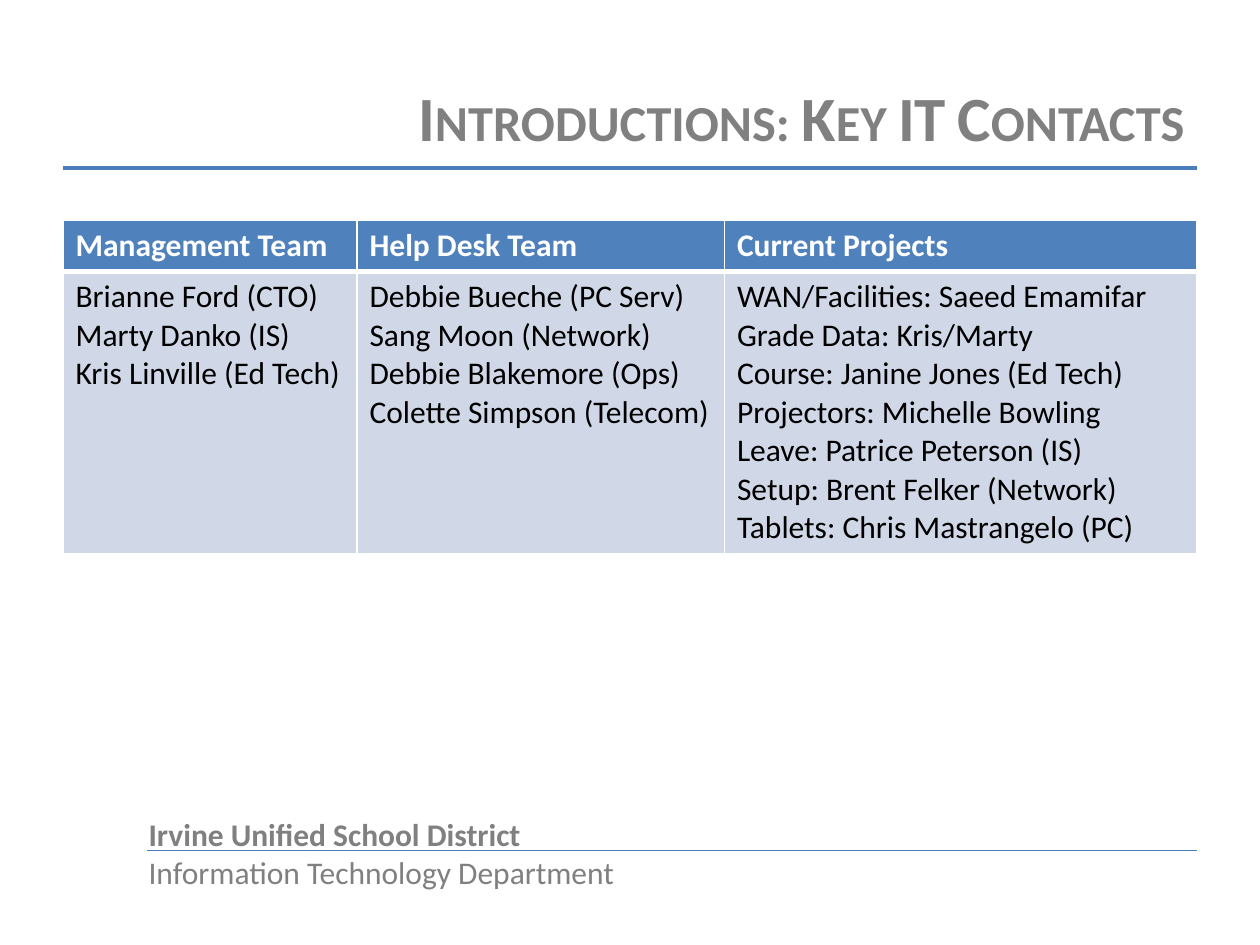
from lxml.etree import SubElement
from pptx import Presentation
from pptx.dml.color import RGBColor
from pptx.enum.shapes import MSO_CONNECTOR
from pptx.enum.text import MSO_ANCHOR, PP_ALIGN
from pptx.oxml.ns import qn
from pptx.util import Pt

COLORS = {
    "gray": "808080",
    "rule": "4B7EBC",
    "header": "4F81BD",
    "body": "D0D8E8",
    "white": "FFFFFF",
    "black": "000000",
}
CONTACTS = {
    "Management Team": [
        "Brianne Ford (CTO)",
        "Marty Danko (IS)",
        "Kris Linville (Ed Tech)",
    ],
    "Help Desk Team": [
        "Debbie Bueche (PC Serv)",
        "Sang Moon (Network)",
        "Debbie Blakemore (Ops)",
        "Colette Simpson (Telecom)",
    ],
    "Current Projects": [
        "WAN/Facilities: Saeed Emamifar",
        "Grade Data: Kris/Marty",
        "Course: Janine Jones (Ed Tech)",
        "Projectors: Michelle Bowling",
        "Leave: Patrice Peterson (IS)",
        "Setup: Brent Felker (Network)",
        "Tablets: Chris Mastrangelo (PC)",
    ],
}
COLUMN_WIDTHS = [168, 210, 270]
ROW_HEIGHTS = [29.2, 161]


def color(name):
    return RGBColor.from_string(COLORS[name])


def write_lines(text_frame, lines, size, color_name, bold=False):
    text_frame.text = "\n".join(lines)
    for paragraph in text_frame.paragraphs:
        paragraph.font.name = "Calibri"
        paragraph.font.size = Pt(size)
        paragraph.font.bold = bold
        paragraph.font.color.rgb = color(color_name)


def add_text_box(slide, left, top, width, height):
    text_frame = slide.shapes.add_textbox(
        Pt(left), Pt(top), Pt(width), Pt(height)).text_frame
    text_frame.word_wrap = True
    return text_frame


def add_rule(slide, left, right, y, width):
    rule = slide.shapes.add_connector(
        MSO_CONNECTOR.STRAIGHT, Pt(left), Pt(y), Pt(right), Pt(y))
    rule.line.color.rgb = color("rule")
    rule.line.width = Pt(width)
    SubElement(rule._element.spPr, qn("a:effectLst"))


def add_title(slide, text):
    """Right-aligned title in small capitals."""
    text_frame = add_text_box(slide, 36, 21.6, 648, 90)
    text_frame.vertical_anchor = MSO_ANCHOR.MIDDLE
    write_lines(text_frame, [text], 36, "gray", bold=True)
    paragraph = text_frame.paragraphs[0]
    paragraph.alignment = PP_ALIGN.RIGHT
    paragraph.runs[0]._r.get_or_add_rPr().set("cap", "small")


def add_footer(slide):
    text_frame = add_text_box(slide, 77.8, 462.2, 600, 72.7)
    write_lines(
        text_frame,
        ["Irvine Unified School District", "Information Technology Department"],
        18, "gray")
    text_frame.paragraphs[0].font.bold = True


def set_border(cell, side, width):
    """White border on one side; side is an element name such as a:lnB."""
    properties = cell._tc.get_or_add_tcPr()
    border = SubElement(properties, qn(side), w=str(Pt(width)))
    fill = SubElement(border, qn("a:solidFill"))
    SubElement(fill, qn("a:srgbClr"), val=COLORS["white"])


def fill_cell(cell, lines, fill_name, color_name, bold):
    cell.fill.solid()
    cell.fill.fore_color.rgb = color(fill_name)
    write_lines(cell.text_frame, lines, 18, color_name, bold)


def add_contact_table(slide):
    table = slide.shapes.add_table(
        len(ROW_HEIGHTS), len(CONTACTS), Pt(36), Pt(126),
        Pt(sum(COLUMN_WIDTHS)), Pt(sum(ROW_HEIGHTS))).table
    for row, height in zip(table.rows, ROW_HEIGHTS):
        row.height = Pt(height)
    for index, (heading, people) in enumerate(CONTACTS.items()):
        table.columns[index].width = Pt(COLUMN_WIDTHS[index])
        header_cell, body_cell = table.cell(0, index), table.cell(1, index)
        set_border(header_cell, "a:lnB", 3)
        set_border(body_cell, "a:lnT", 3)
        fill_cell(header_cell, [heading], "header", "white", True)
        fill_cell(body_cell, people, "body", "black", False)


def main():
    presentation = Presentation()
    presentation.slide_width = Pt(720)
    presentation.slide_height = Pt(540)
    slide = presentation.slides.add_slide(presentation.slide_layouts[6])
    add_footer(slide)
    add_rule(slide, 84, 684, 486, 0.75)
    add_rule(slide, 36, 684, 96, 2.5)
    add_title(slide, "Introductions: Key IT Contacts")
    add_contact_table(slide)
    presentation.save("out.pptx")


if __name__ == "__main__":
    main()
